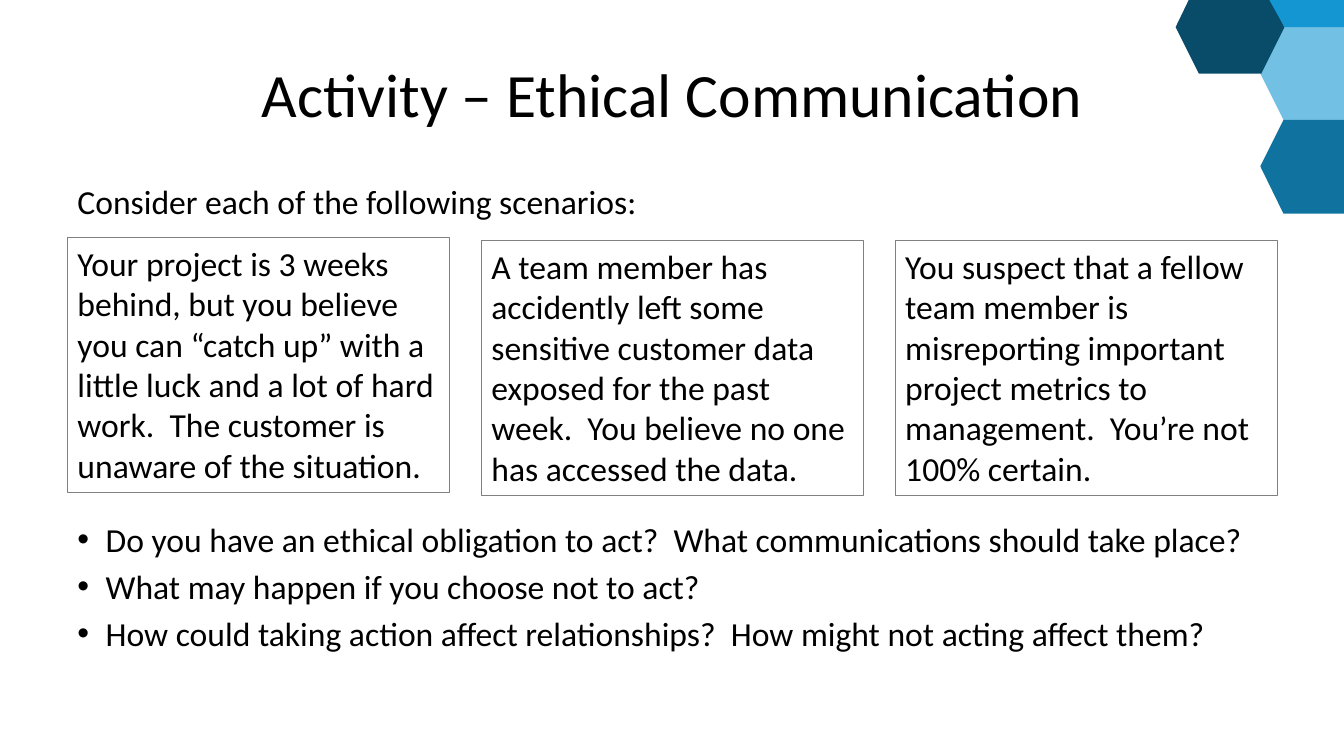
from lxml import etree
from pptx import Presentation
from pptx.dml.color import RGBColor
from pptx.enum.shapes import MSO_SHAPE
from pptx.enum.text import MSO_ANCHOR, PP_ALIGN
from pptx.oxml.ns import qn
from pptx.util import Inches, Pt

RECTANGLE = MSO_SHAPE.RECTANGLE
TOP, MIDDLE = MSO_ANCHOR.TOP, MSO_ANCHOR.MIDDLE
LEFT, CENTER = PP_ALIGN.LEFT, PP_ALIGN.CENTER

BLACK = RGBColor(0x00, 0x00, 0x00)
GREY = RGBColor(0x80, 0x80, 0x80)
SKY = RGBColor(0x72, 0xC0, 0xE3)
TEAL = RGBColor(0x10, 0x72, 0x9E)
NAVY = RGBColor(0x09, 0x4C, 0x6A)
BLUE = RGBColor(0x13, 0x96, 0xD1)

FONT = "Calibri"
BODY_SIZE = 24
MARGIN, CONTENT_WIDTH = 0.67, 12
BULLET_INDENT = Inches(0.28)

HEXAGONS = [
    (SKY, [(12.5, 0.73), (12.73, 0.26), (13.33, 0.26), (13.33, 1.19), (12.73, 1.19)]),
    (TEAL, [(12.5, 1.65), (12.73, 1.19), (13.33, 1.19), (13.33, 2.12), (12.73, 2.12)]),
    (NAVY, [(11.66, 0.27), (11.79, 0), (12.61, 0), (12.74, 0.27), (12.51, 0.73),
            (11.89, 0.73)]),
    (BLUE, [(12.59, 0), (13.33, 0), (13.33, 0.27), (12.74, 0.27)]),
]

BOX_WIDTH, BOX_HEIGHT, BOX_PITCH = 3.79, 2.53, 4.105
SCENARIOS = [
    (2.36, "Your project is 3 weeks behind, but you believe you can “catch up” with a "
           "little luck and a lot of hard work.  The customer is unaware of the situation."),
    (2.39, "A team member has accidently left some sensitive customer data exposed for "
           "the past week.  You believe no one has accessed the data."),
    (2.39, "You suspect that a fellow team member is misreporting important project "
           "metrics to management.  You’re not 100% certain."),
]

QUESTIONS = [
    "Do you have an ethical obligation to act?  What communications should take place?",
    "What may happen if you choose not to act?",
    "How could taking action affect relationships?  How might not acting affect them?",
]


def add_hexagon(slide, color, points):
    """Draw a hexagon, cut off where it meets the slide edge."""
    corners = [(Inches(x), Inches(y)) for x, y in points]
    builder = slide.shapes.build_freeform(*corners[0])
    builder.add_line_segments(corners[1:], close=True)
    s = builder.convert_to_shape()
    s.shadow.inherit = False
    s.fill.solid()
    s.fill.fore_color.rgb = color
    s.line.fill.background()


def add_bullet(p):
    pPr = p._p.get_or_add_pPr()
    pPr.set("marL", str(BULLET_INDENT))
    pPr.set("indent", str(-BULLET_INDENT))
    etree.SubElement(pPr, qn("a:buFont")).set("typeface", "Arial")
    etree.SubElement(pPr, qn("a:buChar")).set("char", "•")


def write_text(tf, paragraphs, size=BODY_SIZE, align=LEFT, anchor=TOP, bulleted=False):
    tf.word_wrap = True
    tf.vertical_anchor = anchor
    for i, text in enumerate(paragraphs):
        p = tf.paragraphs[0] if i == 0 else tf.add_paragraph()
        p.alignment = align
        p.space_before = Pt(0.2 * size)
        if bulleted:
            add_bullet(p)
        r = p.add_run()
        r.text = text
        r.font.name = FONT
        r.font.size = Pt(size)
        r.font.color.rgb = BLACK


def add_text(slide, top, height, paragraphs, **style):
    """Add a text box as wide as the content area."""
    s = slide.shapes.add_textbox(Inches(MARGIN), Inches(top),
                                 Inches(CONTENT_WIDTH), Inches(height))
    write_text(s.text_frame, paragraphs, **style)


def add_scenario(slide, left, top, text):
    s = slide.shapes.add_shape(RECTANGLE, Inches(left), Inches(top),
                               Inches(BOX_WIDTH), Inches(BOX_HEIGHT))
    s.shadow.inherit = False
    s.fill.background()
    s.line.color.rgb = GREY
    s.line.width = Pt(0.75)
    write_text(s.text_frame, [text])


def main():
    prs = Presentation()
    prs.slide_width, prs.slide_height = Inches(13.33), Inches(7.5)
    slide = prs.slides.add_slide(prs.slide_layouts[6])

    for color, points in HEXAGONS:
        add_hexagon(slide, color, points)
    add_text(slide, 0.3, 1.25, ["Activity – Ethical Communication"],
             size=44, align=CENTER, anchor=MIDDLE)
    add_text(slide, 1.75, 0.6, ["Consider each of the following scenarios:"])
    for i, (top, text) in enumerate(SCENARIOS):
        add_scenario(slide, MARGIN + i * BOX_PITCH, top, text)
    add_text(slide, 5.1, 1.69, QUESTIONS, bulleted=True)

    prs.save("out.pptx")


if __name__ == "__main__":
    main()
